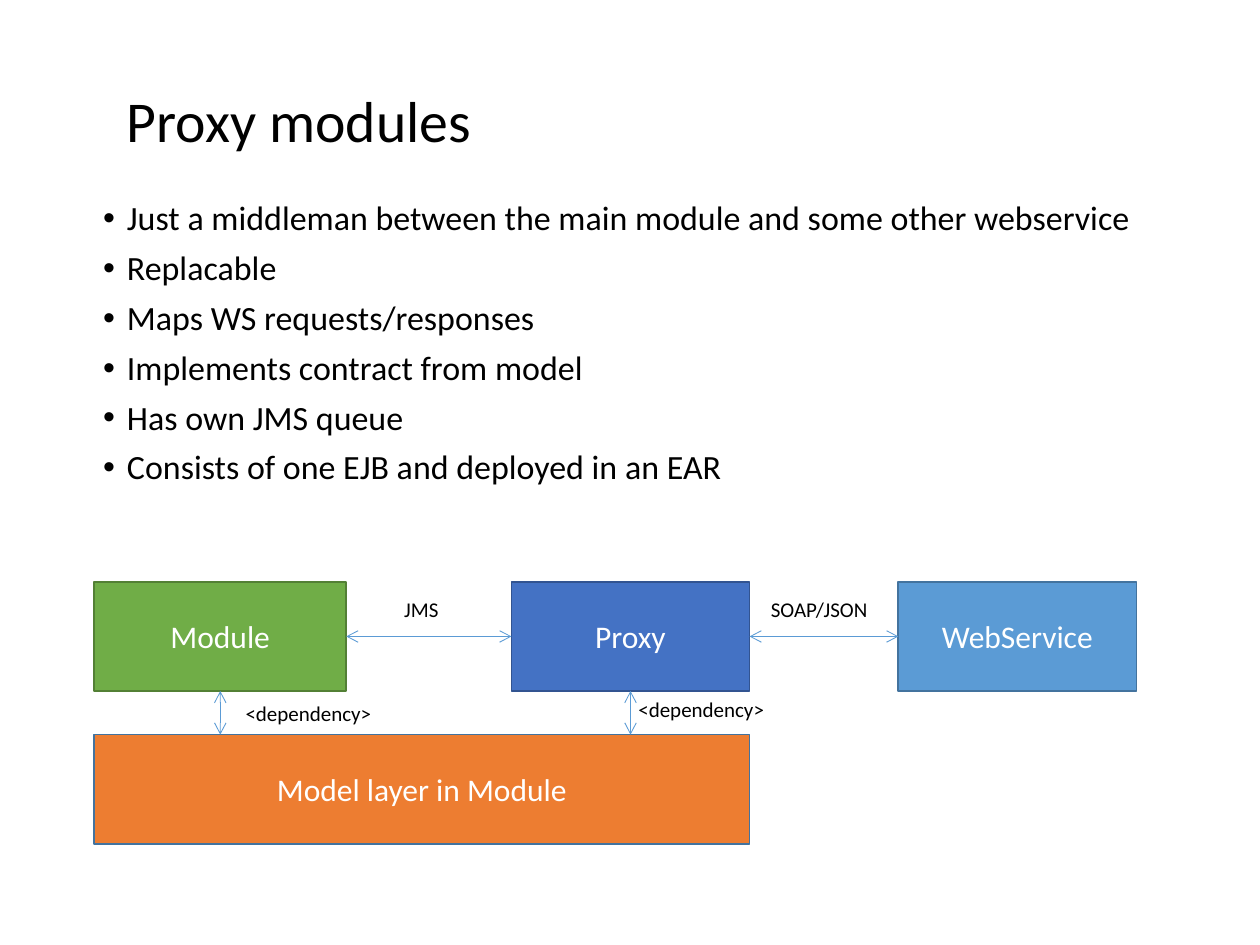
"""Build the Proxy modules slide with its bullets and module diagram."""
from lxml.etree import SubElement
from pptx import Presentation
from pptx.dml.color import RGBColor
from pptx.enum.shapes import MSO_CONNECTOR, MSO_SHAPE
from pptx.enum.text import MSO_ANCHOR, MSO_AUTO_SIZE, PP_ALIGN
from pptx.oxml.ns import qn
from pptx.util import Cm, Pt


def color(value):
    return RGBColor.from_string(value)


def write(paragraph, text, size, text_color="000000"):
    paragraph.text = text
    paragraph.font.name = "Calibri"
    paragraph.font.size = Pt(size)
    paragraph.font.color.rgb = color(text_color)


presentation = Presentation()
presentation.slide_width = Cm(25.4)
presentation.slide_height = Cm(19.05)
slide = presentation.slides.add_slide(presentation.slide_layouts[6])

title = slide.shapes.add_textbox(Cm(2.31), Cm(0.91), Cm(16.64), Cm(3.18)).text_frame
title.word_wrap = True
title.vertical_anchor = MSO_ANCHOR.MIDDLE
title.paragraphs[0].line_spacing = 0.9
write(title.paragraphs[0], "Proxy modules", 33)

bullets = [
    "Just a middleman between the main module and some other webservice",
    "Replacable",
    "Maps WS requests/responses",
    "Implements contract from model",
    "Has own JMS queue",
    "Consists of one EJB and deployed in an EAR",
]
body = slide.shapes.add_textbox(Cm(1.83), Cm(3.94), Cm(21.62), Cm(6.2)).text_frame
body.word_wrap = True
for index, text in enumerate(bullets):
    paragraph = body.add_paragraph() if index else body.paragraphs[0]
    write(paragraph, text, 19.4)
    paragraph.line_spacing = 0.9
    paragraph.space_before = Pt(7.5)
    properties = paragraph._p.get_or_add_pPr()
    properties.set("marL", str(Cm(0.48)))
    properties.set("indent", str(-Cm(0.48)))
    bullet_font = SubElement(properties, qn("a:buFont"), typeface="Arial")
    bullet_font.addnext(SubElement(properties, qn("a:buChar"), char="•"))
    properties.append(properties.find(qn("a:defRPr")))

box_height = 2.2
upper_top = 11.73
lower_top = 14.81
upper_bottom = upper_top + box_height
upper_middle = upper_top + box_height / 2
boxes = [
    ("Model layer in Module", 1.9, lower_top, 13.21, "ED7D31", "43739E"),
    ("Proxy", 10.31, upper_top, 4.8, "4472C4", "325491"),
    ("WebService", 18.11, upper_top, 4.8, "5B9BD5", "43739E"),
    ("Module", 1.9, upper_top, 5.08, "70AD47", "538035"),
]
for text, left, top, width, fill, line in boxes:
    shape = slide.shapes.add_shape(
        MSO_SHAPE.RECTANGLE, Cm(left), Cm(top), Cm(width), Cm(box_height))
    shape.shadow.inherit = False
    shape.fill.solid()
    shape.fill.fore_color.rgb = color(fill)
    shape.line.color.rgb = color(line)
    shape.line.width = Pt(1)
    shape.text_frame.vertical_anchor = MSO_ANCHOR.MIDDLE
    paragraph = shape.text_frame.paragraphs[0]
    paragraph.alignment = PP_ALIGN.CENTER
    write(paragraph, text, 18, "FFFFFF")

arrows = [
    (12.71, upper_bottom, 12.71, lower_top),
    (18.11, upper_middle, 15.11, upper_middle),
    (6.98, upper_middle, 10.31, upper_middle),
    (4.44, upper_bottom, 4.44, lower_top),
]
for ends in arrows:
    connector = slide.shapes.add_connector(
        MSO_CONNECTOR.STRAIGHT, *[Cm(end) for end in ends])
    connector.line.color.rgb = color("5B9BD5")
    connector.line.width = Pt(0.5)
    line_element = connector.line._get_or_add_ln()
    for end_name in ("a:headEnd", "a:tailEnd"):
        SubElement(line_element, qn(end_name), type="arrow")
    SubElement(connector._element.spPr, qn("a:effectLst"))

labels = [
    ("SOAP/JSON", 15.29, 11.91, 2.84),
    ("<dependency>", 12.62, 13.92, 3.07),
    ("JMS", 7.9, 11.91, 1.24),
    ("<dependency>", 4.7, 14, 3.07),
]
for text, left, top, width in labels:
    label = slide.shapes.add_textbox(Cm(left), Cm(top), Cm(width), Cm(0.76)).text_frame
    label.word_wrap = False
    label.auto_size = MSO_AUTO_SIZE.SHAPE_TO_FIT_TEXT
    write(label.paragraphs[0], text, 12)

presentation.save("out.pptx")
